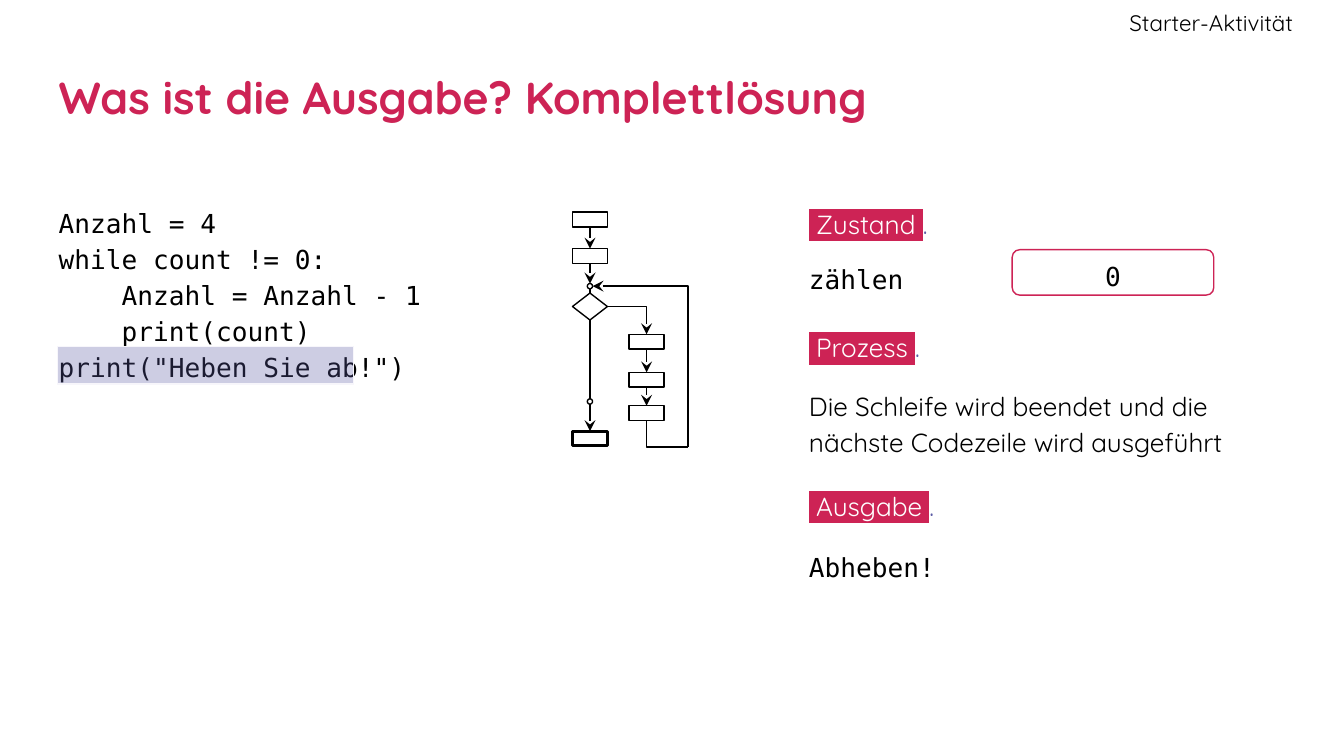
from dataclasses import dataclass

from lxml.etree import SubElement
from pptx import Presentation
from pptx.dml.color import RGBColor
from pptx.enum.shapes import MSO_CONNECTOR, MSO_SHAPE
from pptx.enum.text import MSO_ANCHOR, PP_ALIGN
from pptx.oxml.ns import qn
from pptx.util import Cm, Pt

COLORS = {"accent": "CD2355", "text": "000000", "white": "FFFFFF",
          "marker": "5B5BA5", "marker_line": "F7F6FB"}
SANS, MONO = "Quicksand", "DejaVu Sans Mono"
PAD = 0.25  # text inset in cm
BOX_W, BOX_H, DOT = 0.66, 0.28, 0.1
MAIN_X, BODY_X, LOOP_X = 11.15, 12.22, 13.0  # flowchart columns
PANEL_X = 15.04


@dataclass
class Text:
    lines: list[str]
    x: float
    y: float
    w: float
    h: float
    font: str = SANS
    size: int = 14
    color: str = "text"
    bold: bool = False
    spacing: float = 1.15


@dataclass
class Link:
    x1: float
    y1: float
    x2: float
    y2: float
    arrow: str = "tailEnd"  # "headEnd", "tailEnd" or "" for none
    bent: bool = False


def rgb(name: str) -> RGBColor:
    return RGBColor.from_string(COLORS[name])


def style_paragraph(p, t: Text) -> None:
    p.line_spacing = t.spacing
    p.font.name, p.font.size, p.font.bold = t.font, Pt(t.size), t.bold
    p.font.color.rgb = rgb(t.color)


def add_text(s, t: Text):
    tf = s.shapes.add_textbox(Cm(t.x), Cm(t.y), Cm(t.w), Cm(t.h)).text_frame
    tf.word_wrap = True
    tf.margin_left = tf.margin_right = tf.margin_top = tf.margin_bottom = Cm(PAD)
    for i, line in enumerate(t.lines):
        p = tf.paragraphs[0] if i == 0 else tf.add_paragraph()
        p.text = line
        style_paragraph(p, t)
    return tf


def add_label(s, word: str, y: float) -> None:
    """Section label on a coloured highlight, followed by a small dot."""
    tf = add_text(s, Text([""], PANEL_X, y, 5.92, 1.02, spacing=1.14))
    p = tf.paragraphs[0]
    for text, color in ((f" {word} ", "white"), (".", "marker")):
        r = p.add_run()
        r.text = text
        r.font.color.rgb = rgb(color)
        if color == "white":
            highlight = SubElement(r.font._element, qn("a:highlight"))
            SubElement(highlight, qn("a:srgbClr")).set("val", COLORS["accent"])


def add_outline(s, kind: MSO_SHAPE, x: float, y: float, w: float, h: float,
                color: str = "text", weight: float = 0.75):
    sp = s.shapes.add_shape(kind, Cm(x), Cm(y), Cm(w), Cm(h))
    sp.shadow.inherit = False
    sp.fill.background()
    sp.line.color.rgb = rgb(color)
    sp.line.width = Pt(weight)
    return sp


def add_link(s, link: Link) -> None:
    kind = MSO_CONNECTOR.ELBOW if link.bent else MSO_CONNECTOR.STRAIGHT
    c = s.shapes.add_connector(kind, Cm(link.x1), Cm(link.y1),
                               Cm(link.x2), Cm(link.y2))
    c.line.color.rgb = rgb("text")
    c.line.width = Pt(0.75)
    props = c._element.spPr
    if link.bent:  # a single corner: across, then up or down
        props.find(qn("a:prstGeom")).set("prst", "bentConnector2")
    if link.arrow:
        SubElement(c.line._get_or_add_ln(), qn(f"a:{link.arrow}")).set("type", "stealth")
    SubElement(props, qn("a:effectLst"))


def add_header(s) -> None:
    tf = add_text(s, Text(["Was ist die Ausgabe? Komplettlösung"], 0.86, 0.86,
                          23.67, 1.93, size=24, color="accent", bold=True, spacing=1.0))
    tf.vertical_anchor = MSO_ANCHOR.MIDDLE
    tf = add_text(s, Text(["Starter-Aktivität"], 19.0, 0, 5.44, 0.86,
                          size=12, spacing=1.0))
    tf.vertical_anchor = MSO_ANCHOR.MIDDLE
    tf.margin_right = 0
    tf.paragraphs[0].alignment = PP_ALIGN.RIGHT


def add_code(s) -> None:
    lines = ["Anzahl = 4", "while count != 0:", "Anzahl = Anzahl - 1",
             "print(count)", 'print("Heben Sie ab!")']
    tf = add_text(s, Text(lines, 0.86, 3.58, 8.13, 4.78, font=MONO))
    for p in tf.paragraphs[2:4]:  # loop body, four characters in
        p._p.get_or_add_pPr().set("marL", str(Cm(1.19)))
    # Marker over the current line
    sp = add_outline(s, MSO_SHAPE.RECTANGLE, 1.09, 6.55, 5.59, 0.71, "marker_line")
    sp.fill.solid()
    sp.fill.fore_color.rgb = rgb("marker")
    color = sp._element.spPr.find(qn("a:solidFill")).find(qn("a:srgbClr"))
    SubElement(color, qn("a:alpha")).set("val", "30000")


def add_flowchart(s) -> None:
    # Links
    links = [Link(MAIN_X, y1, MAIN_X, y2, arrow) for y1, y2, arrow in (
        (4.29, 4.7, "tailEnd"), (4.98, 5.36, "tailEnd"), (5.46, 5.54, ""),
        (6.05, 7.54, ""), (7.64, 8.15, "tailEnd"))]
    links += [Link(BODY_X, y1, BODY_X, y2) for y1, y2 in ((6.6, 7.04), (7.32, 7.67))]
    links += [Link(11.46, 5.79, BODY_X, 6.32, bent=True),
              Link(LOOP_X, 8.45, BODY_X, 7.95, arrow="", bent=True),
              Link(11.2, 5.41, LOOP_X, 8.45, arrow="headEnd", bent=True)]
    for link in links:
        add_link(s, link)
    # Steps; the current one has a heavy outline
    for center, y, weight in ((MAIN_X, 4.01, 0.75), (MAIN_X, 4.7, 0.75),
                              (MAIN_X, 8.15, 1.5), (BODY_X, 6.32, 0.75),
                              (BODY_X, 7.04, 0.75), (BODY_X, 7.67, 0.75)):
        add_outline(s, MSO_SHAPE.RECTANGLE, center - BOX_W / 2, y, BOX_W, BOX_H,
                    weight=weight)
    # Decision and junctions
    add_outline(s, MSO_SHAPE.FLOWCHART_DECISION, MAIN_X - BOX_W / 2, 5.54, BOX_W, 0.51)
    for y in (5.36, 7.54):
        add_outline(s, MSO_SHAPE.OVAL, MAIN_X - DOT / 2, y, DOT, DOT)


def add_panel(s) -> None:
    for word, y in (("Zustand", 3.61), ("Prozess", 5.94), ("Ausgabe", 8.94)):
        add_label(s, word, y)
    add_text(s, Text(["zählen"], PANEL_X, 4.65, 3.4, 1.02, font=MONO))
    add_text(s, Text(["Die Schleife wird beendet und die nächste Codezeile "
                      "wird ausgeführt"], PANEL_X, 7.04, 9.91, 1.83))
    add_text(s, Text(["Abheben!"], PANEL_X, 10.08, 9.91, 1.83, font=MONO))
    # Value of the counter
    value = Text(["0"], 19.13, 4.72, 3.81, 0.86, font=MONO)
    sp = add_outline(s, MSO_SHAPE.ROUNDED_RECTANGLE, value.x, value.y,
                     value.w, value.h, "accent")
    tf = sp.text_frame
    tf.margin_top, tf.margin_bottom = Cm(0.05), 0
    tf.vertical_anchor = MSO_ANCHOR.MIDDLE
    p = tf.paragraphs[0]
    p.text = value.lines[0]
    p.alignment = PP_ALIGN.CENTER
    style_paragraph(p, value)


def main() -> None:
    prs = Presentation()
    prs.slide_width, prs.slide_height = Cm(25.4), Cm(14.29)
    s = prs.slides.add_slide(prs.slide_layouts[6])
    add_header(s)
    add_code(s)
    add_flowchart(s)
    add_panel(s)
    prs.save("out.pptx")


if __name__ == "__main__":
    main()
